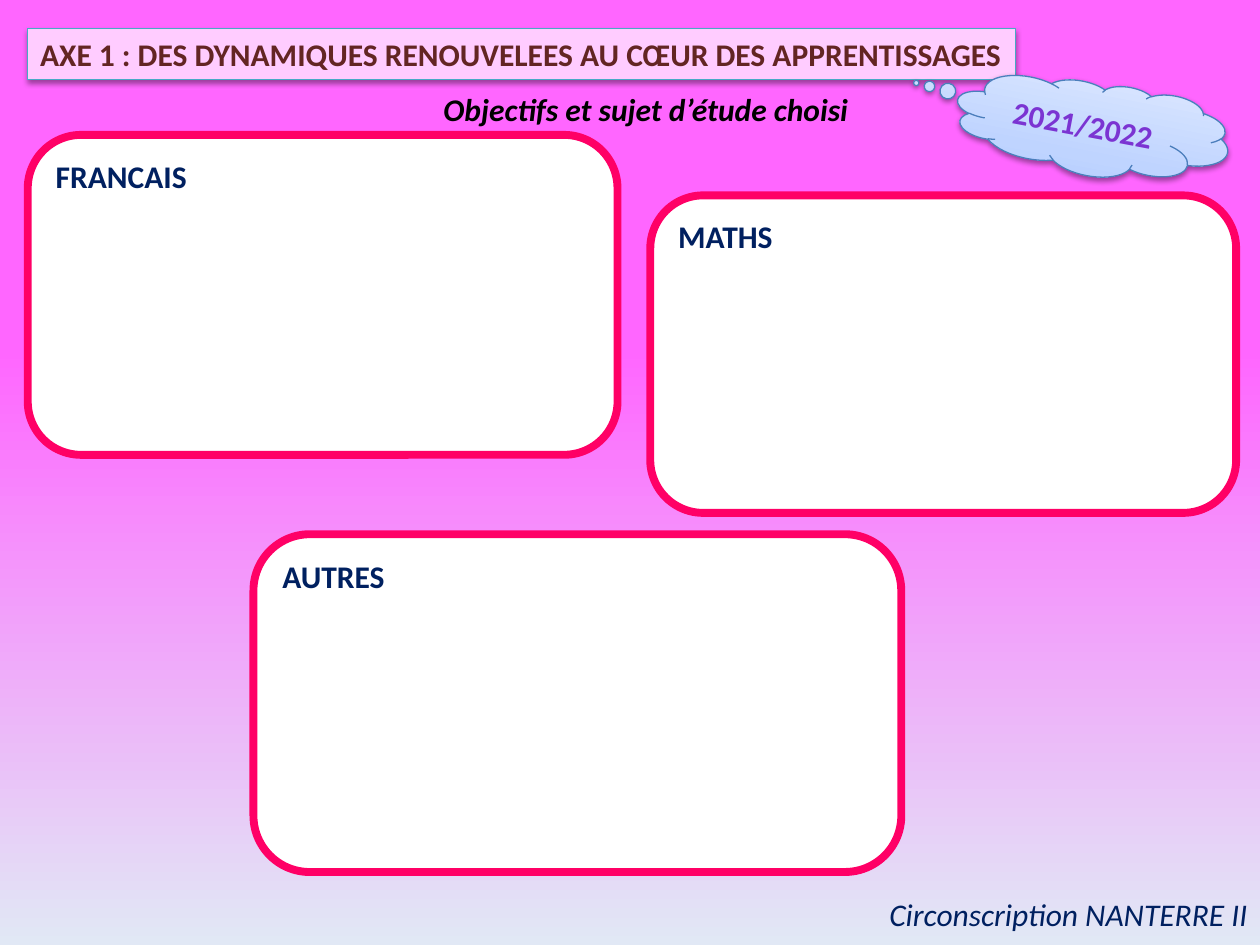
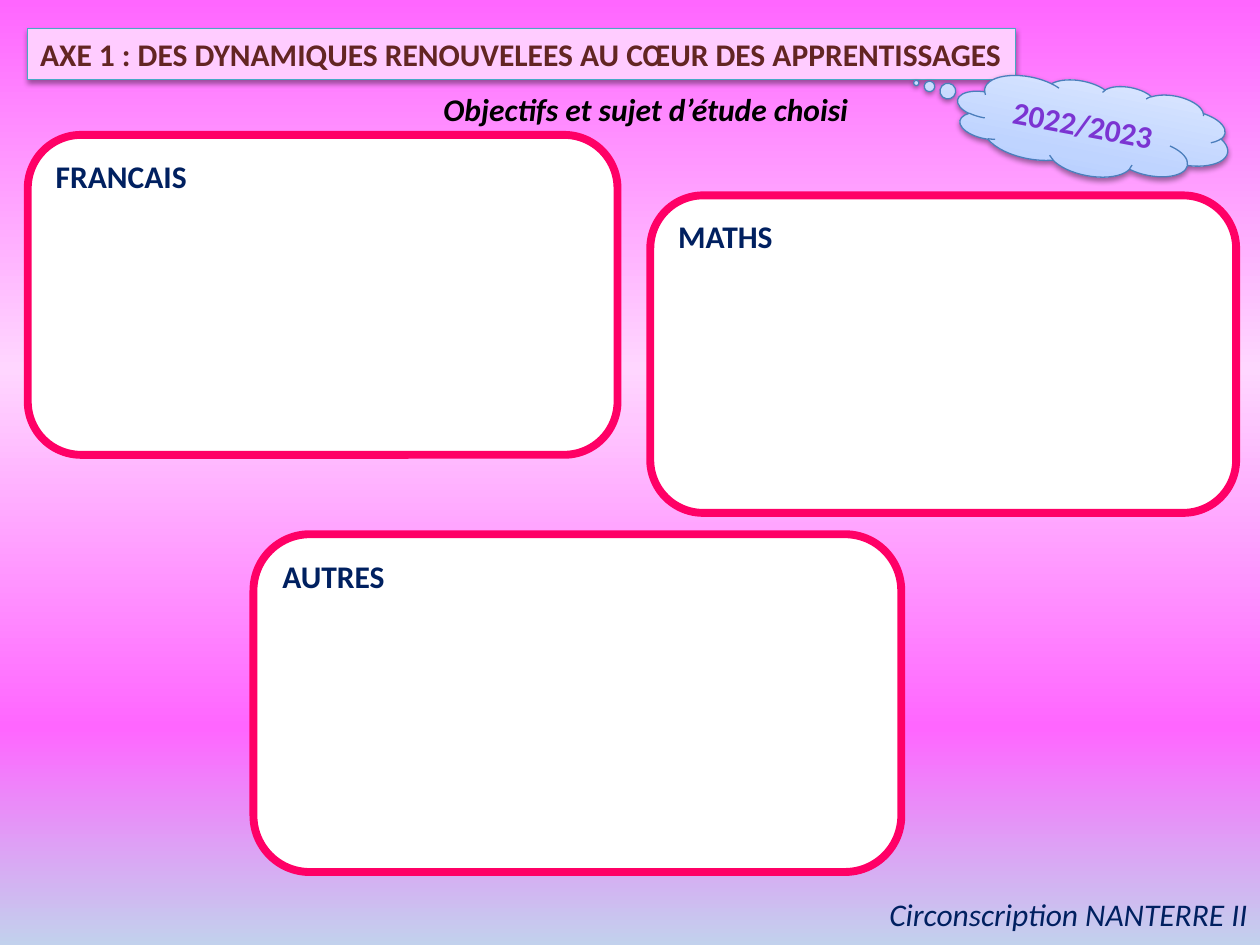
from lxml.etree import SubElement
from pptx import Presentation
from pptx.dml.color import RGBColor
from pptx.enum.shapes import MSO_SHAPE
from pptx.enum.text import MSO_ANCHOR, MSO_AUTO_SIZE, PP_ALIGN
from pptx.oxml.ns import qn
from pptx.util import Cm, Pt

NAVY = RGBColor(0x00, 0x20, 0x60)
MAROON = RGBColor(0x63, 0x25, 0x23)
BLACK = RGBColor(0x00, 0x00, 0x00)
WHITE = RGBColor(0xFF, 0xFF, 0xFF)
CRIMSON = RGBColor(0xFF, 0x00, 0x66)
PINK = RGBColor(0xFF, 0x66, 0xFF)
PALE_PINK = RGBColor(0xFF, 0xCC, 0xFF)
SOFT_PINK = RGBColor(0xFF, 0xD6, 0xFF)
MIST = RGBColor(0xE1, 0xE8, 0xF5)
HAZE = RGBColor(0xC2, 0xD1, 0xED)
TEAL = RGBColor(0x46, 0xAA, 0xC5)
CLOUD_EDGE = RGBColor(0x4B, 0x7E, 0xBC)
CLOUD_DARK = RGBColor(0xA4, 0xC4, 0xFF)
CLOUD_MID = RGBColor(0xBF, 0xD4, 0xFF)
CLOUD_LIGHT = RGBColor(0xE6, 0xEE, 0xFF)
DEEP_VIOLET = RGBColor(0x3D, 0x1B, 0x67)
VIOLET = RGBColor(0x7B, 0x34, 0xD2)
MID_VIOLET = RGBColor(0x73, 0x30, 0xC4)
VIOLET_EDGE = RGBColor(0x5E, 0x45, 0x7C)

CLOUD_STOPS = [(0, CLOUD_DARK), (35, CLOUD_MID), (100, CLOUD_LIGHT)]
YEAR_STOPS = [(0, DEEP_VIOLET), (43, VIOLET), (48, MID_VIOLET), (100, DEEP_VIOLET)]
SUBJECTS = [
    ("FRANCAIS", (0.56, 2.72, 11.89, 6.45)),
    ("MATHS", (13.11, 3.94, 11.81, 6.4)),
    ("AUTRES", (5.11, 10.77, 13.06, 6.81)),
]
YEARS = [
    ("2021/2022", [(0, PINK), (23, PINK), (37, PINK), (100, MIST)]),
    ("2022/2023", [(0, PINK), (39, SOFT_PINK), (77, PINK), (100, HAZE), (100, MIST)]),
]


class Deck:
    """Holds the shared style and the slide being filled."""

    font_name = "Calibri"
    font_size = Pt(18)

    def __init__(self):
        self.presentation = Presentation()
        self.presentation.slide_width = Cm(25.4)
        self.presentation.slide_height = Cm(19.05)
        self.slide = None

    def new_slide(self, stops):
        self.slide = self.presentation.slides.add_slide(self.presentation.slide_layouts[6])
        self.gradient(self.slide.background.fill, self.slide.element, stops, 270)

    def gradient(self, fill, element, stops, angle):
        fill.gradient()
        fill.gradient_angle = angle
        stop_list = next(element.iter(qn("a:gsLst")))
        for stop in list(stop_list):
            stop_list.remove(stop)
        for position, color in stops:
            stop = SubElement(stop_list, qn("a:gs"), pos=str(position * 1000))
            SubElement(stop, qn("a:srgbClr"), val=str(color))

    def shadow(self, shape):
        effects = shape.element.spPr.find(qn("a:effectLst"))
        outer = SubElement(effects, qn("a:outerShdw"), blurRad="40000", dist="20000",
                           dir="5400000", rotWithShape="0")
        color = SubElement(outer, qn("a:srgbClr"), val=str(BLACK))
        SubElement(color, qn("a:alpha"), val="38000")

    def set_text(self, shape, text, color, bold=True, italic=False, align=PP_ALIGN.LEFT):
        frame = shape.text_frame
        frame.word_wrap = True
        frame.vertical_anchor = MSO_ANCHOR.TOP
        frame.text = text
        paragraph = frame.paragraphs[0]
        paragraph.alignment = align
        font = paragraph.runs[0].font
        font.name, font.size = self.font_name, self.font_size
        font.bold, font.italic = bold, italic
        font.color.rgb = color
        return font

    def outlined(self, preset, place, line_color, line_width):
        shape = self.slide.shapes.add_shape(preset, *map(Cm, place))
        shape.shadow.inherit = False
        shape.line.color.rgb = line_color
        shape.line.width = Pt(line_width)
        return shape

    def banner(self, text, place):
        shape = self.outlined(MSO_SHAPE.RECTANGLE, place, TEAL, 0.75)
        shape.fill.solid()
        shape.fill.fore_color.rgb = PALE_PINK
        self.shadow(shape)
        self.set_text(shape, text, MAROON)
        shape.text_frame.auto_size = MSO_AUTO_SIZE.SHAPE_TO_FIT_TEXT

    def card(self, text, place):
        shape = self.outlined(MSO_SHAPE.ROUNDED_RECTANGLE, place, CRIMSON, 4.5)
        shape.fill.solid()
        shape.fill.fore_color.rgb = WHITE
        self.set_text(shape, text, NAVY)

    def label(self, text, place, color, **style):
        shape = self.slide.shapes.add_textbox(*map(Cm, place))
        self.set_text(shape, text, color, italic=True, **style)
        shape.text_frame.auto_size = MSO_AUTO_SIZE.SHAPE_TO_FIT_TEXT

    def cloud(self, text, place):
        shape = self.outlined(MSO_SHAPE.CLOUD_CALLOUT, place, CLOUD_EDGE, 0.75)
        shape.adjustments[0], shape.adjustments[1] = -0.66, -0.12
        shape.rotation = 10.8
        self.gradient(shape.fill, shape.element.spPr, CLOUD_STOPS, 90)
        self.shadow(shape)
        font = self.set_text(shape, text, VIOLET, align=PP_ALIGN.CENTER)
        shape.text_frame.vertical_anchor = MSO_ANCHOR.MIDDLE
        body = shape.element.txBody
        self.gradient(font.fill, body, YEAR_STOPS, 270)
        properties = next(body.iter(qn("a:rPr")))
        outline = SubElement(properties, qn("a:ln"), w=str(Pt(0.71)))
        solid = SubElement(outline, qn("a:solidFill"))
        SubElement(solid, qn("a:srgbClr"), val=str(VIOLET_EDGE))
        properties.insert(0, outline)


def main():
    deck = Deck()
    for year, stops in YEARS:
        deck.new_slide(stops)
        deck.banner("AXE 1 : DES DYNAMIQUES RENOUVELEES AU CŒUR DES APPRENTISSAGES",
                    (0.56, 0.58, 19.91, 1.02))
        for subject, place in SUBJECTS:
            deck.card(subject, place)
        deck.label("Circonscription NANTERRE II", (16.51, 17.91, 8.89, 1.02), NAVY,
                   bold=False, align=PP_ALIGN.RIGHT)
        deck.label("Objectifs et sujet d’étude choisi", (8.69, 1.7, 9.27, 1.02), BLACK)
        deck.cloud(year, (19.25, 1.63, 5.54, 1.91))
    deck.presentation.save("out.pptx")


if __name__ == "__main__":
    main()
